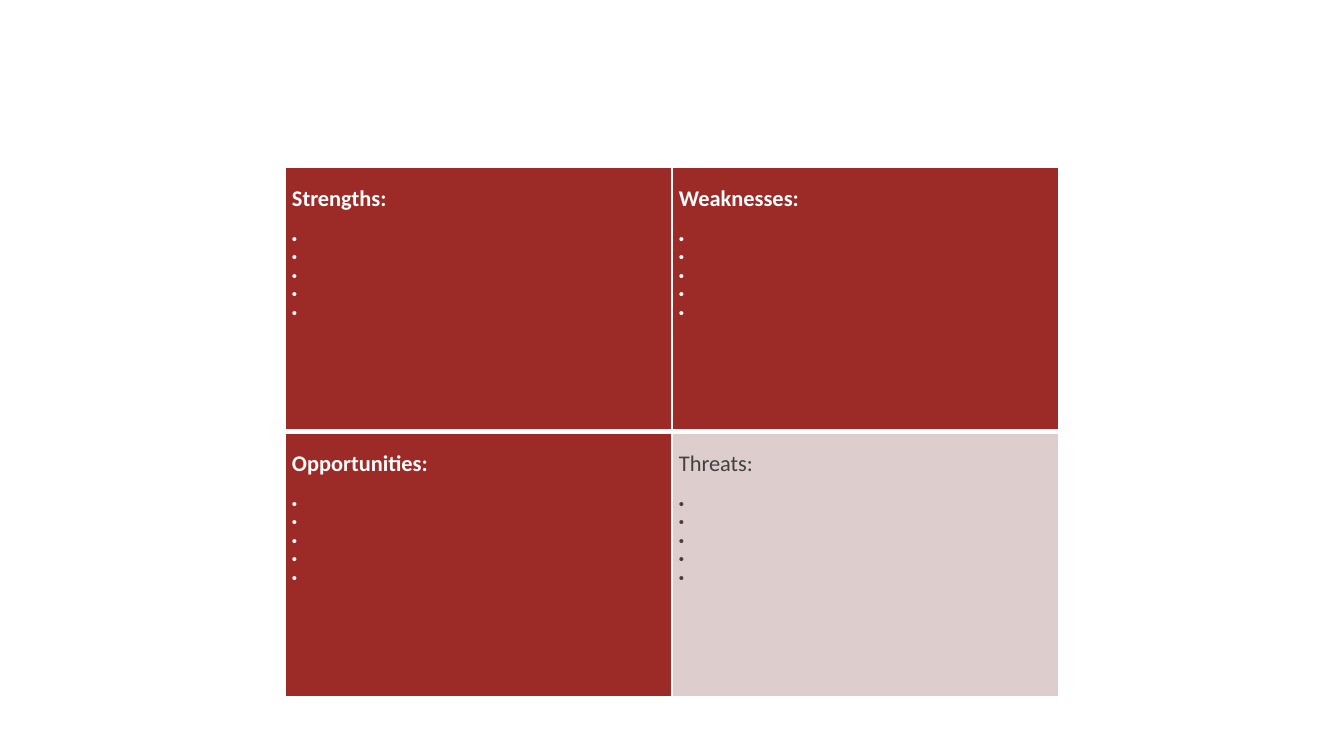
from dataclasses import dataclass

import pptx
import pptx.dml.color
import pptx.oxml.ns
import pptx.table
import pptx.util
from lxml import etree

EMU_PER_PX = 914400 / 134.4
COLORS = {"red": "9C2A27", "pink": "DECDCD", "white": "FFFFFF", "gray": "414141"}
FONT = "Calibri"
BULLET_COUNT = 5
BLANK_ENTRY = " "  # a no-break space keeps an unfilled bullet showing


@dataclass
class Quadrant:
    row: int
    column: int
    heading: str
    fill: str = "red"
    ink: str = "white"
    bold: bool = True
    bottom_pt: int = 1


QUADRANTS = [
    Quadrant(0, 0, "Strengths:", bottom_pt=3),
    Quadrant(0, 1, "Weaknesses:", bottom_pt=3),
    Quadrant(1, 0, "Opportunities:"),
    Quadrant(1, 1, "Threats:", fill="pink", ink="gray", bold=False),
]


def px(length: int) -> pptx.util.Emu:
    return pptx.util.Emu(round(length * EMU_PER_PX))


def rgb(name: str) -> pptx.dml.color.RGBColor:
    return pptx.dml.color.RGBColor.from_string(COLORS[name])


def write(paragraph, text: str, *, size: int, color: str, bold: bool,
          after: int = 0, bullet: bool = False) -> None:
    run = paragraph.add_run()
    run.text = text
    run.font.name = FONT
    run.font.size = pptx.util.Pt(size)
    run.font.bold = bold
    run.font.color.rgb = rgb(color)
    paragraph.space_after = px(after)
    if bullet:
        properties = paragraph._p.get_or_add_pPr()
        properties.set("marL", str(px(51)))
        properties.set("indent", str(-px(51)))
        etree.SubElement(properties, pptx.oxml.ns.qn("a:buFont"), typeface="Arial")
        etree.SubElement(properties, pptx.oxml.ns.qn("a:buChar"), char="•")


def set_borders(cell: pptx.table._Cell, bottom_pt: int) -> None:
    properties = cell._tc.get_or_add_tcPr()
    widths = {"L": 1, "R": 1, "T": 1, "B": bottom_pt}
    for position, (side, width) in enumerate(widths.items()):
        border = etree.Element(pptx.oxml.ns.qn(f"a:ln{side}"), w=str(pptx.util.Pt(width)))
        fill = etree.SubElement(border, pptx.oxml.ns.qn("a:solidFill"))
        etree.SubElement(fill, pptx.oxml.ns.qn("a:srgbClr"), val=COLORS["white"])
        properties.insert(position, border)


def draw_quadrant(table: pptx.table.Table, quadrant: Quadrant) -> None:
    cell = table.cell(quadrant.row, quadrant.column)
    cell.fill.solid()
    cell.fill.fore_color.rgb = rgb(quadrant.fill)
    set_borders(cell, quadrant.bottom_pt)
    cell.margin_left = cell.margin_right = px(7)
    cell.margin_top, cell.margin_bottom = px(18), 0

    frame = cell.text_frame
    style = {"color": quadrant.ink, "bold": quadrant.bold}
    write(frame.paragraphs[0], quadrant.heading, size=12, after=18, **style)
    for _ in range(BULLET_COUNT):
        write(frame.add_paragraph(), BLANK_ENTRY, size=8, bullet=True, **style)


def main() -> None:
    deck = pptx.Presentation()
    deck.slide_width, deck.slide_height = px(1344), px(756)
    slide = deck.slides.add_slide(deck.slide_layouts[6])

    # SWOT grid: two equal columns and two equal rows
    swot = slide.shapes.add_table(2, 2, px(285), px(167), px(774), px(530)).table
    swot.first_row = swot.horz_banding = False
    for quadrant in QUADRANTS:
        draw_quadrant(swot, quadrant)

    deck.save("out.pptx")


if __name__ == "__main__":
    main()
